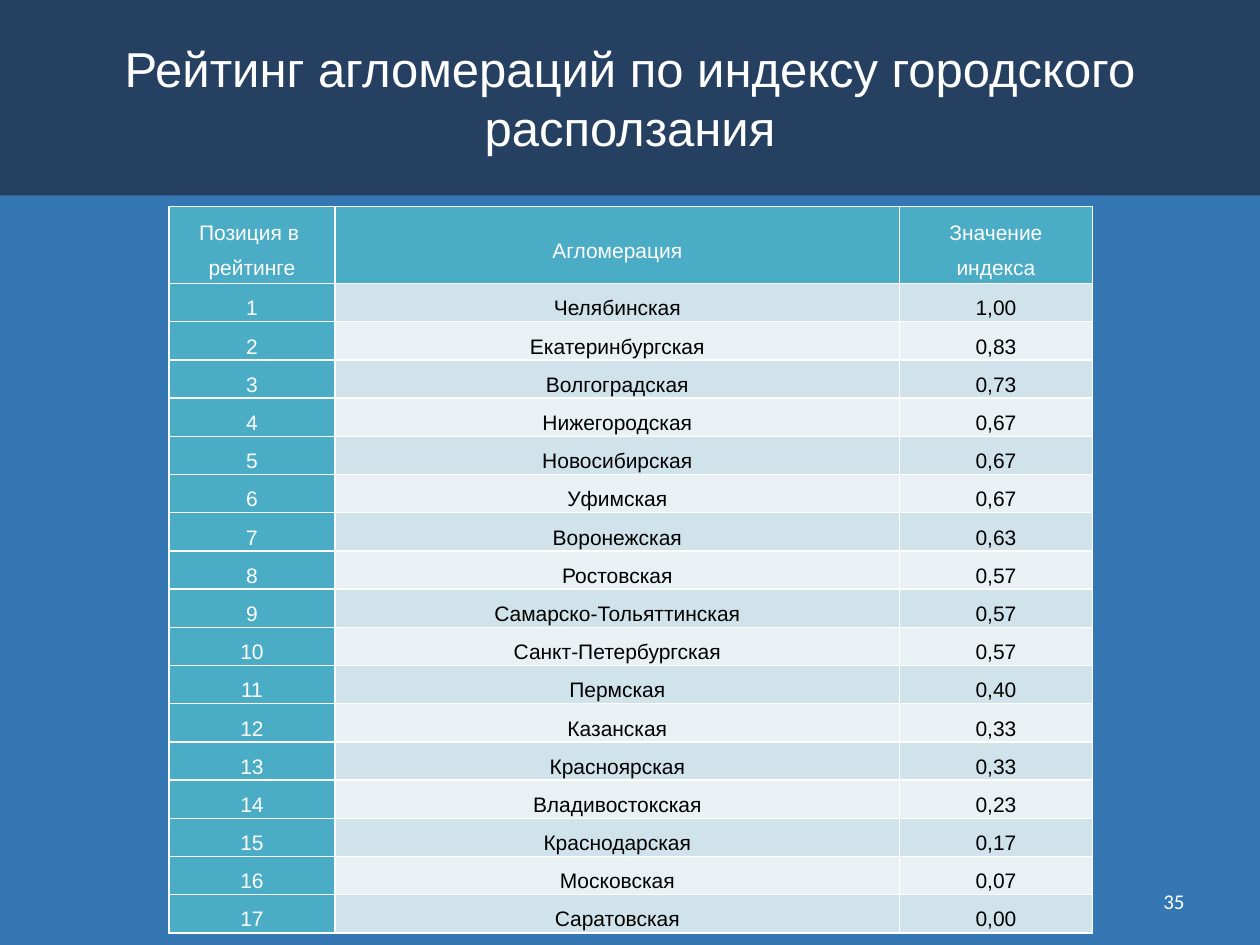
from lxml.etree import SubElement
from pptx import Presentation
from pptx.dml.color import RGBColor
from pptx.enum.shapes import MSO_SHAPE as Shape
from pptx.enum.text import MSO_ANCHOR as Anchor, PP_ALIGN as Align
from pptx.oxml.ns import qn
from pptx.util import Inches, Pt

COLORS = {
    "page": "3477B2",
    "band": "254061",
    "accent": "4BACC6",
    "odd": "D0E3EA",
    "even": "E9F1F5",
    "light": "FFFFFF",
    "dark": "000000",
}
HEADINGS = ["Позиция в \nрейтинге", "Агломерация", "Значение индекса"]
RATING = [
    ("Челябинская", "1,00"),
    ("Екатеринбургская", "0,83"),
    ("Волгоградская", "0,73"),
    ("Нижегородская", "0,67"),
    ("Новосибирская", "0,67"),
    ("Уфимская", "0,67"),
    ("Воронежская", "0,63"),
    ("Ростовская", "0,57"),
    ("Самарско-Тольяттинская", "0,57"),
    ("Санкт-Петербургская", "0,57"),
    ("Пермская", "0,40"),
    ("Казанская", "0,33"),
    ("Красноярская", "0,33"),
    ("Владивостокская", "0,23"),
    ("Краснодарская", "0,17"),
    ("Московская", "0,07"),
    ("Саратовская", "0,00"),
]
COLUMN_WIDTHS = [1.32, 4.48, 1.53]
HEADER_HEIGHT = 0.61


def color(name):
    return RGBColor.from_string(COLORS[name])


def paint(target, name):
    target.fill.solid()
    target.fill.fore_color.rgb = color(name)


def write(frame, text, size, tint, align=Align.CENTER, font="Arial", spacing=None):
    frame.word_wrap = True
    for index, line in enumerate(text.split("\n")):
        para = frame.add_paragraph() if index else frame.paragraphs[0]
        para.alignment = align
        if spacing:
            para.line_spacing = spacing
        span = para.add_run()
        span.text = line
        span.font.size = Pt(size)
        span.font.name = font
        span.font.color.rgb = color(tint)


def add_text(page, box, text, size, **style):
    label = page.shapes.add_textbox(*map(Inches, box))
    label.text_frame.vertical_anchor = Anchor.MIDDLE
    write(label.text_frame, text, size, "light", **style)


def add_header(page, box, text):
    left, top, width, height = box
    band = page.shapes.add_shape(Shape.RECTANGLE, *map(Inches, box))
    band.shadow.inherit = False
    paint(band, "band")
    band.line.fill.background()
    add_text(page, (left + 0.5, top + 0.15, width - 1, height - 0.3), text, 28)


def add_borders(cell):
    properties = cell._tc.get_or_add_tcPr()
    for side in ("lnL", "lnR", "lnT", "lnB"):
        line = SubElement(properties, qn(f"a:{side}"), w=str(Pt(1)))
        fill = SubElement(line, qn("a:solidFill"))
        SubElement(fill, qn("a:srgbClr"), val=COLORS["light"])


def fill_cell(cell, text, fill, tint):
    cell.vertical_anchor = Anchor.MIDDLE
    cell.margin_left = cell.margin_right = Inches(0.06)
    cell.margin_top = cell.margin_bottom = 0
    add_borders(cell)
    paint(cell, fill)
    write(cell.text_frame, text, 12, tint, spacing=1.5)


def add_rating(page, box):
    rows = [HEADINGS] + [(str(place), *entry) for place, entry in enumerate(RATING, 1)]
    frame = page.shapes.add_table(len(rows), len(HEADINGS), *map(Inches, box))
    table = frame.table
    for column, width in zip(table.columns, COLUMN_WIDTHS):
        column.width = Inches(width)
    body_height = (box[3] - HEADER_HEIGHT) / len(RATING)
    for r, values in enumerate(rows):
        table.rows[r].height = Inches(body_height if r else HEADER_HEIGHT)
        for c, value in enumerate(values):
            if r == 0 or c == 0:
                fill, tint = "accent", "light"
            else:
                fill, tint = ("odd" if r % 2 else "even"), "dark"
            fill_cell(table.cell(r, c), value, fill, tint)


def main():
    deck = Presentation()
    deck.slide_width, deck.slide_height = Inches(10), Inches(7.5)
    page = deck.slides.add_slide(deck.slide_layouts[6])
    paint(page.background, "page")
    add_header(page, (0, 0, 10, 1.55), "Рейтинг агломераций по индексу городского расползания")
    add_text(page, (7.17, 6.95, 2.33, 0.4), "35", 12, align=Align.RIGHT, font="Calibri")
    add_rating(page, (1.34, 1.64, 7.32, 5.77))
    deck.save("out.pptx")


if __name__ == "__main__":
    main()
